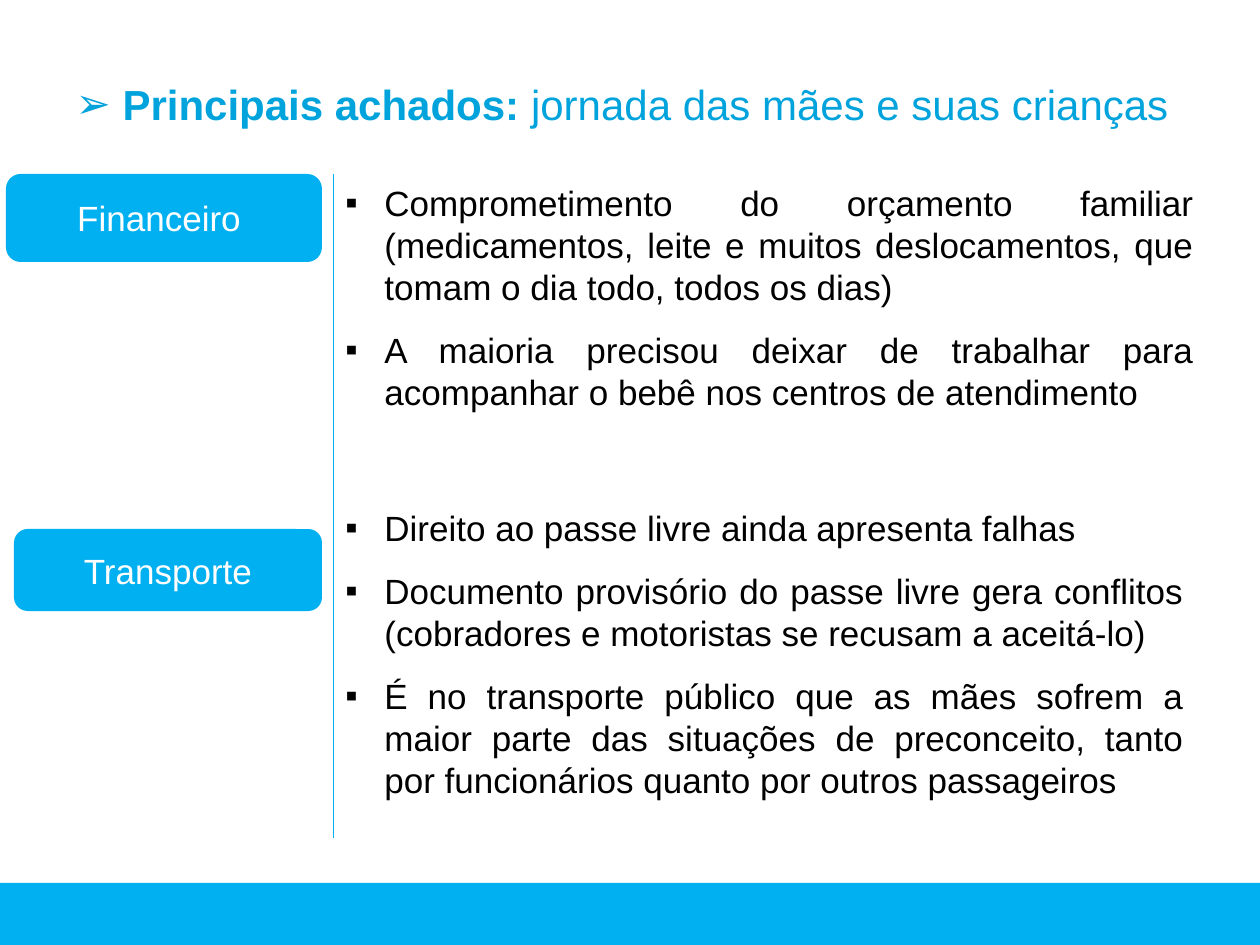
from lxml import etree
from pptx import Presentation
from pptx import util as u
from pptx.dml.color import RGBColor
from pptx.enum import shapes, text
from pptx.oxml import ns

PX = 914400 / 126
CYAN = RGBColor(0x00, 0xB0, 0xF0)
TITLE_BLUE = RGBColor(0x00, 0xA3, 0xDB)
WHITE = RGBColor(0xFF, 0xFF, 0xFF)
BLACK = RGBColor(0x00, 0x00, 0x00)
FONT = "Arial"

TOPICS = [
    ("Financeiro ", (6, 174, 316, 88), (333, 175, 873, 246), [
        "Comprometimento do orçamento familiar (medicamentos, leite e muitos "
        "deslocamentos, que tomam o dia todo, todos os dias)",
        "A maioria precisou deixar de trabalhar para acompanhar o bebê nos "
        "centros de atendimento",
    ]),
    ("Transporte", (14, 529, 308, 82), (333, 500, 863, 310), [
        "Direito ao passe livre ainda apresenta falhas",
        "Documento provisório do passe livre gera conflitos (cobradores e "
        "motoristas se recusam a aceitá-lo)",
        "É no transporte público que as mães sofrem a maior parte das situações "
        "de preconceito, tanto por funcionários quanto por outros passageiros",
    ]),
]


def emu(*lengths):
    """Turn pixel lengths into EMU."""
    return [u.Emu(round(n * PX)) for n in lengths]


def style(r, size, color, bold=False):
    """Format the font of a run."""
    r.font.name = FONT
    r.font.size = u.Pt(size)
    r.font.bold = bold
    r.font.color.rgb = color


def add_bullet(p, char, color, indent):
    """Give a justified paragraph a hanging bullet."""
    p.alignment = text.PP_ALIGN.JUSTIFY
    pPr = p._p.get_or_add_pPr()
    width = emu(indent)[0]
    pPr.set("marL", str(width))
    pPr.set("indent", str(-width))
    clr = etree.SubElement(pPr, ns.qn("a:buClr"))
    etree.SubElement(clr, ns.qn("a:srgbClr"), val=str(color))
    etree.SubElement(pPr, ns.qn("a:buFont"), typeface=FONT)
    etree.SubElement(pPr, ns.qn("a:buChar"), char=char)


def add_block(s, kind, box):
    """Add a plain cyan shape."""
    sp = s.shapes.add_shape(kind, *emu(*box))
    sp.shadow.inherit = False
    sp.fill.solid()
    sp.fill.fore_color.rgb = CYAN
    sp.line.fill.background()
    return sp


def add_title(s, box):
    """Place the bulleted title."""
    sp = s.shapes.title
    sp.left, sp.top, sp.width, sp.height = emu(*box)
    tf = sp.text_frame
    tf.auto_size = text.MSO_AUTO_SIZE.NONE
    tf.vertical_anchor = text.MSO_ANCHOR.TOP
    p = tf.paragraphs[0]
    p.line_spacing = 1.5
    add_bullet(p, "➢", TITLE_BLUE, 47)
    for words, bold in [("Principais achados: ", True),
                        ("jornada das mães e suas crianças", False)]:
        r = p.add_run()
        r.text = words
        style(r, 24, TITLE_BLUE, bold)


def add_divider(s, x, top, bottom):
    """Draw the thin vertical rule."""
    line = s.shapes.add_connector(shapes.MSO_CONNECTOR.STRAIGHT, *emu(x, top, x, bottom))
    line.line.color.rgb = CYAN
    line.line.width = u.Pt(0.5)
    etree.SubElement(line._element.spPr, ns.qn("a:effectLst"))


def add_label(s, label, box):
    """Add the rounded label of a topic."""
    sp = add_block(s, shapes.MSO_SHAPE.ROUNDED_RECTANGLE, box)
    tf = sp.text_frame
    tf.text = label
    tf.vertical_anchor = text.MSO_ANCHOR.MIDDLE
    p = tf.paragraphs[0]
    p.alignment = text.PP_ALIGN.CENTER
    style(p.runs[0], 20, WHITE)


def add_findings(s, findings, box):
    """Add the bulleted findings of a topic."""
    tf = s.shapes.add_textbox(*emu(*box)).text_frame
    tf.word_wrap = True
    tf.text = "\n".join(findings)
    for p in tf.paragraphs:
        p.space_after = u.Pt(12)
        add_bullet(p, "▪", BLACK, 39)
        style(p.runs[0], 20, BLACK)


def main():
    """Build and save the slide."""
    prs = Presentation()
    prs.slide_width, prs.slide_height = emu(1260, 945)
    s = prs.slides.add_slide(prs.slide_layouts[5])
    add_block(s, shapes.MSO_SHAPE.RECTANGLE, (-4, 883, 1264, 62))
    add_divider(s, 333, 174, 838)
    add_title(s, (63, 47, 1143, 79))
    for label, label_box, findings_box, findings in TOPICS:
        add_label(s, label, label_box)
        add_findings(s, findings, findings_box)
    prs.save("out.pptx")


if __name__ == "__main__":
    main()
